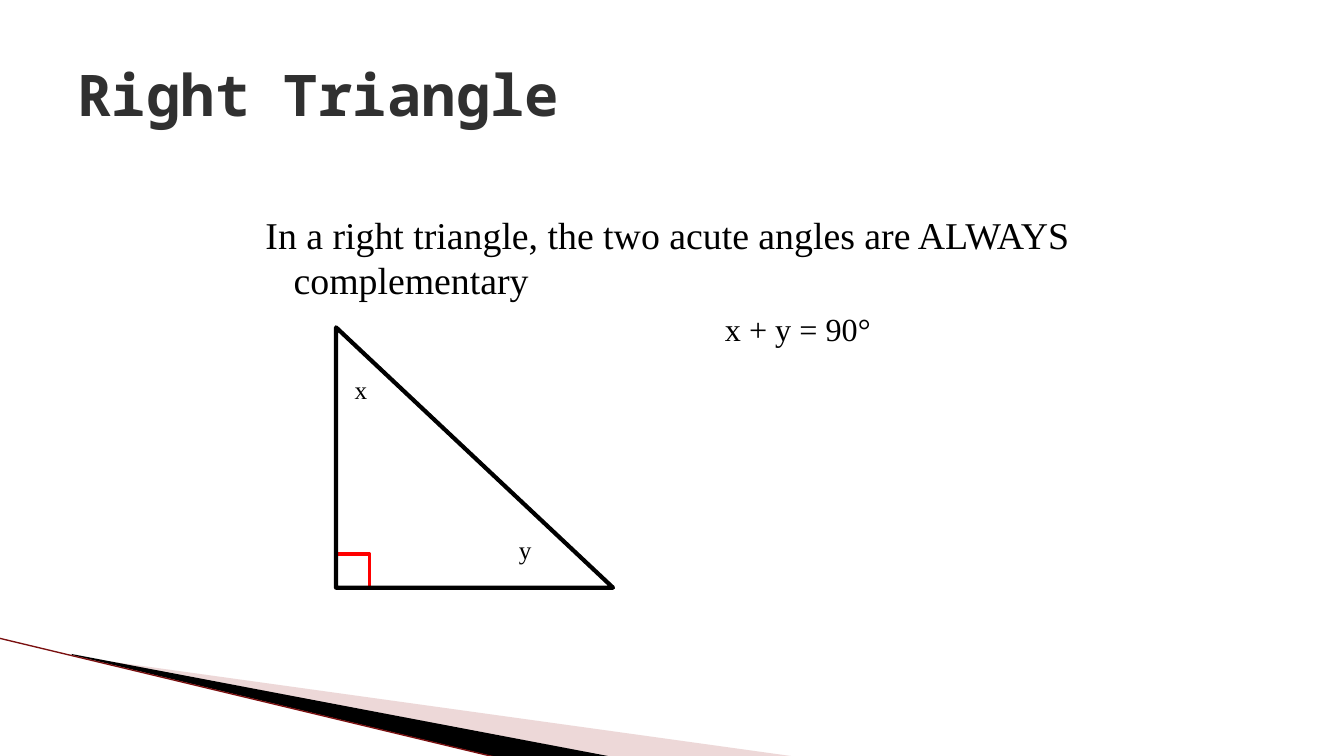
import pptx
import pptx.dml.color
import pptx.enum.shapes
import pptx.enum.text
import pptx.oxml
import pptx.oxml.ns
import pptx.util
from pptx.util import Cm

TITLE = "Right Triangle"
RULE = "In a right triangle, the two acute angles are ALWAYS complementary"
EQUATION = "x + y = 90°"
# angle name: left, top (cm)
ANGLE_LABELS = {"x": (8.69, 9.32), "y": (12.83, 13.34)}

# corner points in cm
PALE_SWOOSH = [(1.85, 16.54), (20.14, 19.08), (15.44, 19.08), (1.85, 16.51)]
DARK_SWOOSH = [(1.8, 16.48), (15.47, 19.08), (12.6, 19.1), (1.83, 16.51)]
EDGE_LINE = [(-0.03, 16.08), (12.57, 19.1)]

TRIANGLE_LEFT, TRIANGLE_TOP = 8.47, 8.25
TRIANGLE_WIDTH, TRIANGLE_HEIGHT = 6.98, 6.56
CORNER_SIDE = 0.85

THEME = {
    "title_font": "Noto Sans Mono", "body_font": "Times New Roman",
    "title_size": 41, "rule_size": 27, "equation_size": 23, "label_size": 18,
    "title": "303030", "ink": "000000", "corner": "FF0000",
    "pale": "D29E9E", "edge": "7A1010",
}


def rgb(name):
    return pptx.dml.color.RGBColor.from_string(THEME[name])


def write(paragraph, text, *, size, font="body_font", color="ink", bold=False,
          left=0, indent=0, before=0):
    """Fill a paragraph; left and indent are in cm, before in points."""
    properties = paragraph._p.get_or_add_pPr()
    properties.set("marL", str(Cm(left)))
    properties.set("indent", str(Cm(indent)))
    paragraph.space_before = pptx.util.Pt(before)
    run = paragraph.add_run()
    run.text = text
    run.font.name = THEME[font]
    run.font.size = pptx.util.Pt(THEME[size])
    run.font.bold = bold
    run.font.color.rgb = rgb(color)


def add_text_frame(slide, left, top, width, height, wrap=True):
    box = slide.shapes.add_textbox(Cm(left), Cm(top), Cm(width), Cm(height))
    box.text_frame.word_wrap = wrap
    return box.text_frame


def add_swoosh(slide, points, color, opacity=100):
    start, *others = [(Cm(x), Cm(y)) for x, y in points]
    builder = slide.shapes.build_freeform(*start)
    builder.add_line_segments(others, close=True)
    shape = builder.convert_to_shape()
    shape.shadow.inherit = False
    shape.line.fill.background()
    shape.fill.solid()
    shape.fill.fore_color.rgb = rgb(color)
    if opacity < 100:
        tone = shape._element.spPr.find(".//" + pptx.oxml.ns.qn("a:srgbClr"))
        alpha = pptx.oxml.parse_xml(
            f'<a:alpha {pptx.oxml.ns.nsdecls("a")} val="{opacity * 1000}"/>')
        tone.append(alpha)


def add_edge(slide):
    (x1, y1), (x2, y2) = EDGE_LINE
    line = slide.shapes.add_connector(
        pptx.enum.shapes.MSO_CONNECTOR.STRAIGHT, Cm(x1), Cm(y1), Cm(x2), Cm(y2))
    line.line.color.rgb = rgb("edge")
    line.line.width = pptx.util.Pt(0.95)
    line._element.spPr.append(
        pptx.oxml.parse_xml(f'<a:effectLst {pptx.oxml.ns.nsdecls("a")}/>'))


def add_outline(slide, preset, left, top, width, height, color, weight):
    shape = slide.shapes.add_shape(preset, Cm(left), Cm(top), Cm(width), Cm(height))
    shape.shadow.inherit = False
    shape.fill.background()
    shape.line.color.rgb = rgb(color)
    shape.line.width = pptx.util.Pt(weight)


def main():
    presentation = pptx.Presentation()
    presentation.slide_width, presentation.slide_height = Cm(33.87), Cm(19.05)
    slide = presentation.slides.add_slide(presentation.slide_layouts[6])

    add_swoosh(slide, PALE_SWOOSH, "pale", opacity=40)
    add_swoosh(slide, DARK_SWOOSH, "ink")
    add_edge(slide)

    presets = pptx.enum.shapes.MSO_SHAPE
    add_outline(slide, presets.RECTANGLE, TRIANGLE_LEFT,
                TRIANGLE_TOP + TRIANGLE_HEIGHT - CORNER_SIDE,
                CORNER_SIDE, CORNER_SIDE, "corner", 2.25)

    body = add_text_frame(slide, 6.15, 5.2, 21.59, 6.55)
    write(body.paragraphs[0], RULE, size="rule_size", left=1.0, indent=-0.71)
    write(body.add_paragraph(), EQUATION, size="equation_size", left=11.87, before=5)

    title = add_text_frame(slide, 1.7, 0.76, 30.48, 3.18)
    title.vertical_anchor = pptx.enum.text.MSO_ANCHOR.MIDDLE
    write(title.paragraphs[0], TITLE, size="title_size", font="title_font",
          color="title", bold=True)

    add_outline(slide, presets.RIGHT_TRIANGLE, TRIANGLE_LEFT, TRIANGLE_TOP,
                TRIANGLE_WIDTH, TRIANGLE_HEIGHT, "ink", 3)
    for name, (left, top) in ANGLE_LABELS.items():
        label = add_text_frame(slide, left, top, 0.84, 1.02, wrap=False)
        write(label.paragraphs[0], name, size="label_size")

    presentation.save("out.pptx")


if __name__ == "__main__":
    main()
